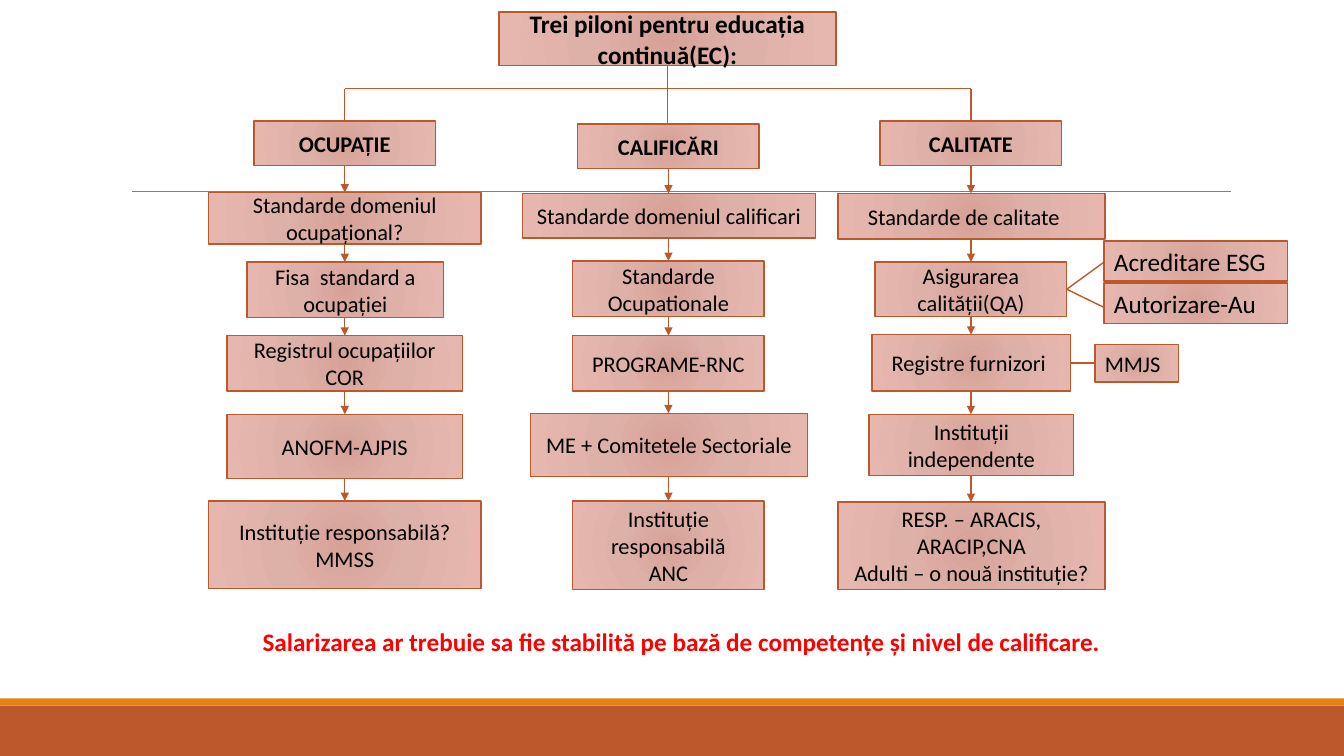
from itertools import pairwise

from pptx import Presentation
from pptx.dml.color import RGBColor
from pptx.enum.shapes import MSO_CONNECTOR, MSO_SHAPE
from pptx.enum.text import MSO_ANCHOR, MSO_AUTO_SIZE, PP_ALIGN
from pptx.oxml import parse_xml
from pptx.oxml.ns import nsdecls, qn
from pptx.oxml.xmlchemy import OxmlElement
from pptx.util import Pt

PX = 9144  # 100 px to the inch
RUST, ORANGE, BLACK, RED, GREY = "BD582C", "E48312", "000000", "FF0000", "808080"
GRADIENT = [(0, "D7A197"), (45, "DEB1A8"), (100, "E6B7AE")]

# Centre of each pillar, then its boxes: top, width, height, text
PILLARS = [
    (342, [
        (120, 180, 44, "OCUPAȚIE"),
        (191, 270, 51, "Standarde domeniul ocupațional?"),
        (260, 195, 55, "Fisa  standard a ocupației"),
        (333, 234, 55, "Registrul ocupațiilor COR"),
        (411, 234, 64, "ANOFM-AJPIS"),
        (497, 270, 87, "Instituție responsabilă?\nMMSS"),
    ]),
    (663, [
        (123, 180, 44, "CALIFICĂRI"),
        (192, 291, 44, "Standarde domeniul calificari"),
        (259, 190, 55, "Standarde\nOcupationale"),
        (333, 190, 55, "PROGRAME-RNC"),
        (410, 275, 63, "ME + Comitetele Sectoriale"),
        (497, 190, 88, "Instituție responsabilă\nANC"),
    ]),
    (963, [
        (120, 180, 44, "CALITATE"),
        (192, 265, 45, "Standarde de calitate"),
        (260, 190, 54, "Asigurarea calității(QA)"),
        (332, 197, 56, "Registre furnizori"),
        (411, 203, 61, "Instituții independente"),
        (498, 265, 87, "RESP. – ARACIS, ARACIP,CNA\nAdulti – o nouă instituție?"),
    ]),
]
RIGHT_INSETS = {"Standarde de calitate": 25, "Registre furnizori": 15}

# Side notes of the quality pillar: left, top, width, height, text, size
SIDE_NOTES = [
    (1095, 239, 182, 40, "Acreditare ESG", 18),
    (1095, 281, 182, 40, "Autorizare-Au", 18),
    (1086, 342, 83, 37, "MMJS", 16),
]
BRANCHES = [
    (662, 65, 662, 123),
    (342, 88, 963, 88),
    (342, 88, 342, 120),
    (963, 88, 963, 120),
    (1058, 287, 1095, 260),
    (1058, 287, 1095, 305),
    (1061, 360, 1086, 360),
]


def rgb(color):
    return RGBColor.from_string(color)


def place(sp, left, top, width, height):
    sp.left, sp.top, sp.width, sp.height = (v * PX for v in (left, top, width, height))


def write(sp, text, size=16, color=BLACK, bold=False, align=PP_ALIGN.CENTER,
          anchor=MSO_ANCHOR.MIDDLE, right=10):
    tf = sp.text_frame
    tf.word_wrap = True
    tf.auto_size = MSO_AUTO_SIZE.NONE
    tf.vertical_anchor = anchor
    tf.margin_right = right * PX
    tf.text = text
    for p in tf.paragraphs:
        p.alignment = align
        for r in p.runs:
            r.font.name = "Calibri"
            r.font.size = Pt(size)
            r.font.bold = bold
            r.font.color.rgb = rgb(color)


def style_box(sp):
    """Give a box the radial pink fill and the rust outline."""
    sp.fill.solid()
    stops = "".join(f'<a:gs pos="{pos * 1000}"><a:srgbClr val="{color}"/></a:gs>'
                    for pos, color in GRADIENT)
    sp_pr = sp._element.spPr
    sp_pr.replace(sp_pr.find(qn("a:solidFill")), parse_xml(
        f'<a:gradFill {nsdecls("a")} rotWithShape="1"><a:gsLst>{stops}</a:gsLst>'
        '<a:path path="circle"><a:fillToRect l="100000" t="100000" r="100000" '
        'b="100000"/></a:path></a:gradFill>'))
    sp.line.color.rgb = rgb(RUST)
    sp.line.width = Pt(1)


def add_rect(slide, left, top, width, height):
    sp = slide.shapes.add_shape(MSO_SHAPE.RECTANGLE, left * PX, top * PX,
                                width * PX, height * PX)
    sp.shadow.inherit = False
    return sp


def add_band(slide, top, height, color):
    sp = add_rect(slide, 0, top, 1333, height)
    sp.fill.solid()
    sp.fill.fore_color.rgb = rgb(color)
    sp.line.fill.background()


def add_box(slide, left, top, width, height, text, **fmt):
    sp = add_rect(slide, left, top, width, height)
    style_box(sp)
    write(sp, text, **fmt)


def add_line(slide, x1, y1, x2, y2, color=RUST, width=1, arrow=False):
    cx = slide.shapes.add_connector(MSO_CONNECTOR.STRAIGHT,
                                    x1 * PX, y1 * PX, x2 * PX, y2 * PX)
    cx.line.color.rgb = rgb(color)
    cx.line.width = Pt(width)
    if arrow:
        tail = OxmlElement("a:tailEnd")
        tail.set("type", "triangle")
        cx.line._get_or_add_ln().append(tail)
    cx._element.spPr.append(OxmlElement("a:effectLst"))


def add_pillar(slide, center, boxes):
    for i, (top, width, height, text) in enumerate(boxes):
        add_box(slide, center - width // 2, top, width, height, text,
                bold=i == 0, right=RIGHT_INSETS.get(text, 10))
    for (top, _, height, _), (next_top, *_) in pairwise(boxes):
        add_line(slide, center, top + height, center, next_top, arrow=True)


def main():
    prs = Presentation()
    prs.slide_width, prs.slide_height = 1333 * PX, 750 * PX
    slide = prs.slides.add_slide(prs.slide_layouts[5])

    add_band(slide, 700, 50, RUST)
    add_band(slide, 693, 7, ORANGE)
    add_line(slide, 131, 190, 1221, 190, color=GREY, width=0.5)

    title = slide.shapes.title
    place(title, 495, 12, 334, 53)
    style_box(title)
    write(title, "Trei piloni pentru educația continuă(EC):", size=18, bold=True)

    for branch in BRANCHES:
        add_line(slide, *branch)
    for center, boxes in PILLARS:
        add_pillar(slide, center, boxes)
    for left, top, width, height, text, size in SIDE_NOTES:
        add_box(slide, left, top, width, height, text, size=size, align=PP_ALIGN.LEFT)

    conclusion = slide.shapes.add_textbox(173 * PX, 616 * PX, 1006 * PX, 40 * PX)
    write(conclusion, "Salarizarea ar trebuie sa fie stabilită pe bază de competențe "
          "și nivel de calificare.", size=18, color=RED, bold=True, anchor=MSO_ANCHOR.TOP)

    prs.save("out.pptx")


if __name__ == "__main__":
    main()
